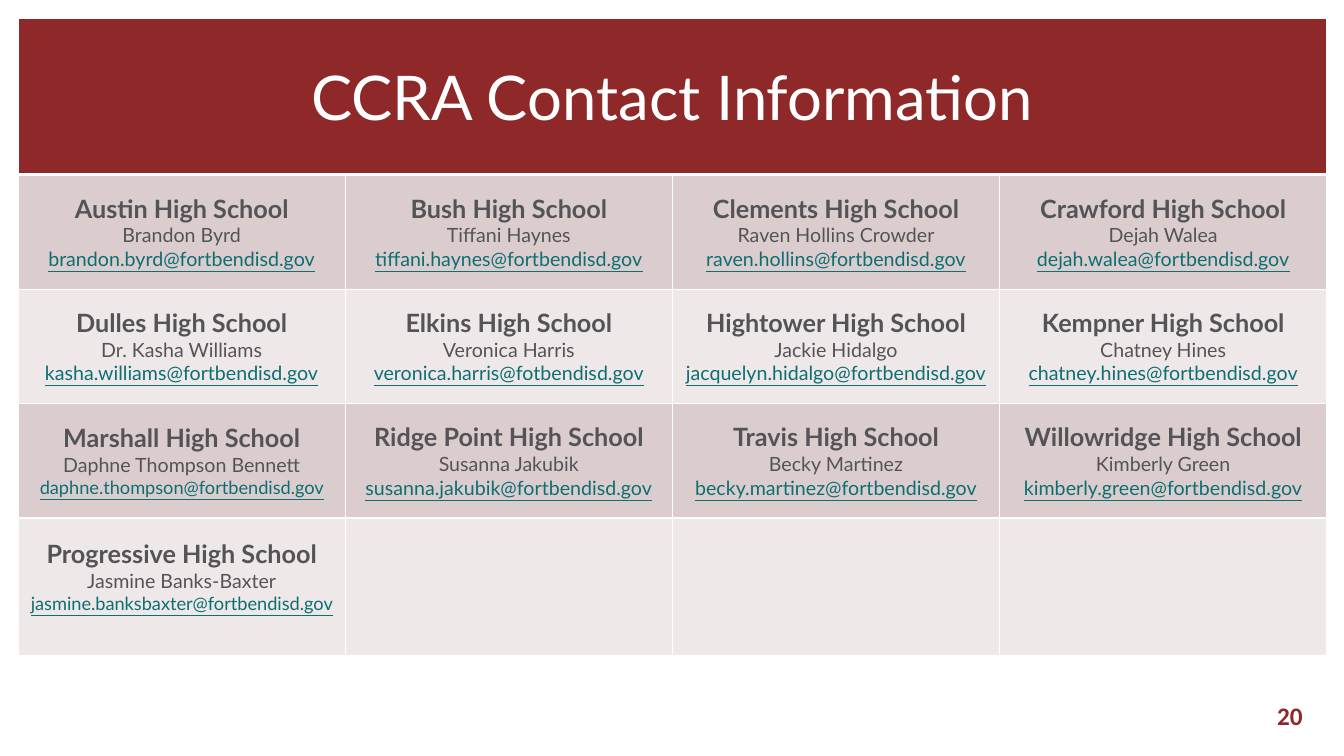
from lxml.etree import SubElement as add_element
from pptx import Presentation
from pptx.dml.color import RGBColor as Color
from pptx.enum.text import MSO_ANCHOR as Anchor, PP_ALIGN as Align
from pptx.oxml.ns import qn
from pptx.util import Inches, Pt

COLORS = {"maroon": "8F2828", "white": "FFFFFF", "gray": "545458",
          "teal": "0D6F74", "dark_band": "DBCDCD", "light_band": "EEE8E8"}
WIDTH, HEIGHT = 13.33, 7.5
COLUMNS, COLUMN_WIDTH = 4, 3.245
ROW_HEIGHTS = [1.55, 1.14, 1.13, 1.14, 1.36]

# School, contact, e-mail, e-mail size
CONTACTS = [
    ("Austin High School", "Brandon Byrd", "brandon.byrd@fortbendisd.gov", 14),
    ("Bush High School", "Tiffani Haynes", "tiffani.haynes@fortbendisd.gov", 14),
    ("Clements High School", "Raven Hollins Crowder", "raven.hollins@fortbendisd.gov", 14),
    ("Crawford High School", "Dejah Walea", "dejah.walea@fortbendisd.gov", 14),
    ("Dulles High School", "Dr. Kasha Williams", "kasha.williams@fortbendisd.gov", 14),
    ("Elkins High School", "Veronica Harris", "veronica.harris@fotbendisd.gov", 14),
    ("Hightower High School", "Jackie Hidalgo", "jacquelyn.hidalgo@fortbendisd.gov", 14),
    ("Kempner High School", "Chatney Hines", "chatney.hines@fortbendisd.gov", 14),
    ("Marshall High School", "Daphne Thompson Bennett", "daphne.thompson@fortbendisd.gov", 13),
    ("Ridge Point High School", "Susanna Jakubik", "susanna.jakubik@fortbendisd.gov", 14),
    ("Travis High School", "Becky Martinez", "becky.martinez@fortbendisd.gov", 14),
    ("Willowridge High School", "Kimberly Green", "kimberly.green@fortbendisd.gov", 14),
    ("Progressive High School", "Jasmine Banks-Baxter", "jasmine.banksbaxter@fortbendisd.gov", 13),
]


def write(para, text, size=14, color="gray", font="Lato", bold=False,
          underline=False, align=Align.CENTER):
    para.alignment = align
    span = para.add_run()
    span.text = text
    span.font.name = font
    span.font.size = Pt(size)
    span.font.bold = bold
    span.font.underline = underline
    span.font.color.rgb = Color.from_string(COLORS[color])


def style_cell(cell, fill, bottom_width=1):
    # Borders come before the fill in the cell properties
    properties = cell._tc.get_or_add_tcPr()
    for side in "LRTB":
        width = bottom_width if side == "B" else 1
        line = add_element(properties, qn(f"a:ln{side}"), w=str(Pt(width)))
        solid = add_element(line, qn("a:solidFill"))
        add_element(solid, qn("a:srgbClr"), val=COLORS["white"])
    cell.fill.solid()
    cell.fill.fore_color.rgb = Color.from_string(COLORS[fill])
    cell.vertical_anchor = Anchor.MIDDLE


def fill_contact(cell, school, person, email, email_size):
    frame = cell.text_frame
    write(frame.paragraphs[0], school, size=18, bold=True)
    write(frame.add_paragraph(), person)
    write(frame.add_paragraph(), email, size=email_size, color="teal", underline=True)


def add_contact_table(page):
    table = page.shapes.add_table(
        len(ROW_HEIGHTS), COLUMNS, Inches(0.18), Inches(0.18),
        Inches(COLUMNS * COLUMN_WIDTH), Inches(sum(ROW_HEIGHTS))).table
    for column in table.columns:
        column.width = Inches(COLUMN_WIDTH)
    for row, height in zip(table.rows, ROW_HEIGHTS):
        row.height = Inches(height)

    # Title row across all columns
    for column in range(COLUMNS):
        style_cell(table.cell(0, column), "maroon", bottom_width=3)
    title = table.cell(0, 0)
    title.merge(table.cell(0, COLUMNS - 1))
    write(title.text_frame.paragraphs[0], "CCRA Contact Information", size=44, color="white")

    # Banded rows of contacts
    last_row = len(ROW_HEIGHTS) - 1
    for row in range(1, last_row + 1):
        for column in range(COLUMNS):
            cell = table.cell(row, column)
            style_cell(cell, "dark_band" if row % 2 else "light_band")
            index = (row - 1) * COLUMNS + column
            if index < len(CONTACTS):
                fill_contact(cell, *CONTACTS[index])
            if row == last_row:
                cell.margin_bottom = Inches(0.25)


def add_page_number(page, number):
    box = page.shapes.add_textbox(Inches(WIDTH * 0.75), Inches(HEIGHT * 0.92),
                                  Inches(3.02), Inches(0.4))
    frame = box.text_frame
    frame.word_wrap = True
    frame.vertical_anchor = Anchor.MIDDLE
    write(frame.paragraphs[0], number, size=18, color="maroon",
          font="Calibri", bold=True, align=Align.RIGHT)


def main():
    deck = Presentation()
    deck.slide_width, deck.slide_height = Inches(WIDTH), Inches(HEIGHT)
    page = deck.slides.add_slide(deck.slide_layouts[6])
    add_page_number(page, "20")
    add_contact_table(page)
    deck.save("out.pptx")


if __name__ == "__main__":
    main()
